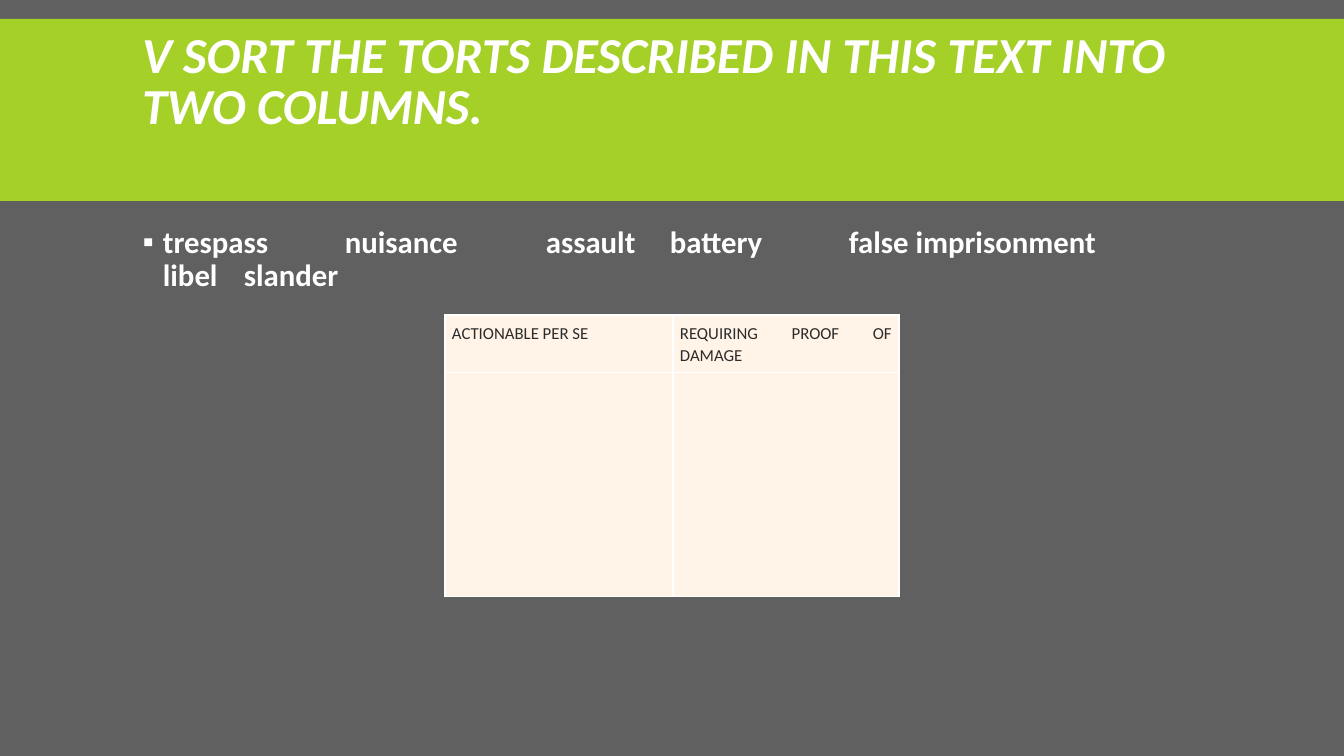
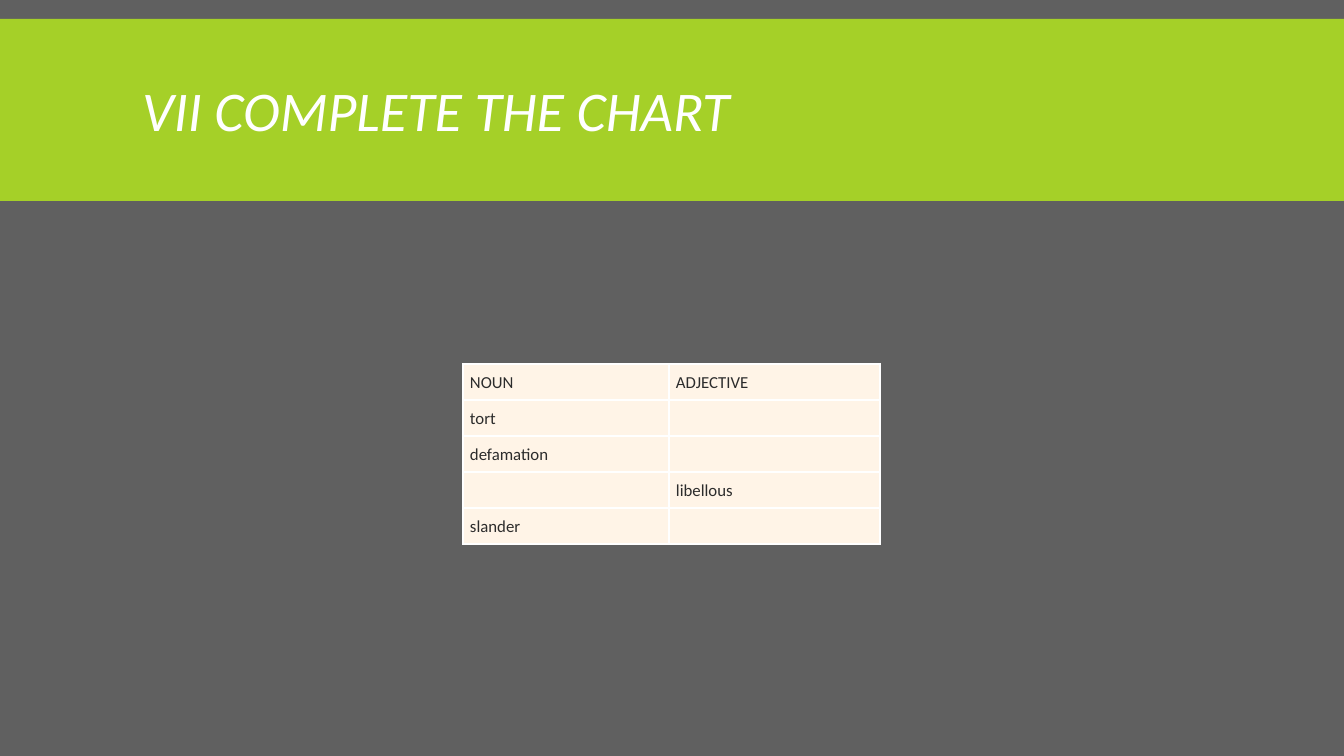
import dataclasses
import typing

import lxml.etree
import pptx
import pptx.dml.color
import pptx.enum.shapes
import pptx.enum.text
import pptx.oxml.ns
import pptx.util

EMU_PER_PX = 914400 / 100.8
SLIDE_WIDTH, SLIDE_HEIGHT = 1344, 756
FONT = "Calibri"
COLORS = {
    "background": "606060",
    "band": "A5D028",
    "light": "FFFFFF",
    "cell": "FFF4E7",
    "ink": "2C2C2C",
}
ALIGN = pptx.enum.text.PP_ALIGN
ANCHOR = pptx.enum.text.MSO_ANCHOR
NO_AUTOFIT = pptx.enum.text.MSO_AUTO_SIZE.NONE


@dataclasses.dataclass(frozen=True)
class Box:
    left: int
    top: int
    width: int
    height: int


@dataclasses.dataclass(frozen=True)
class Title:
    text: str
    size: int
    bold: bool
    anchor: typing.Any
    inset: int


@dataclasses.dataclass(frozen=True)
class Grid:
    left: int
    top: int
    columns: tuple[int, ...]
    row_heights: tuple[int, ...]
    rows: tuple[tuple[str, ...], ...]


BAND = Box(0, 19, SLIDE_WIDTH, 182)
TITLE_BOX = Box(132, 31, 1080, 166)
WORDS_BOX = Box(133, 222, 1079, 464)
WORDS = ("trespass", "nuisance", "assault", "battery", "false imprisonment", "libel", "slander")
WORD_TABS = (101, 202, 403, 527, 706, 1008)
WORDS_INDENT = 20
CELL_INSET = 7

TORTS_TITLE = Title(
    "V SORT THE TORTS DESCRIBED IN THIS TEXT INTO TWO COLUMNS.", 36, True, ANCHOR.TOP, 1)
TORTS_GRID = Grid(445, 315, (228, 226), (57, 224), (
    ("ACTIONABLE PER SE", "REQUIRING PROOF OF DAMAGE"),
    ("", ""),
))
CHART_TITLE = Title("VII COMPLETE THE CHART", 40, False, ANCHOR.MIDDLE, 5)
CHART_GRID = Grid(463, 364, (206, 211), (36,) * 5, (
    ("NOUN", "ADJECTIVE"),
    ("tort", ""),
    ("defamation", ""),
    ("", "libellous"),
    ("slander", ""),
))


def px(length: int) -> pptx.util.Emu:
    return pptx.util.Emu(round(length * EMU_PER_PX))


def place(box: Box) -> dict[str, int]:
    return {name: px(value) for name, value in dataclasses.asdict(box).items()}


def apply(target: typing.Any, values: dict[str, typing.Any]) -> None:
    for name, value in values.items():
        setattr(target, name, value)


def paint(fill: typing.Any, color: str) -> None:
    fill.solid()
    fill.fore_color.rgb = pptx.dml.color.RGBColor.from_string(COLORS[color])


def add_element(parent: typing.Any, tag: str, **attributes: typing.Any) -> typing.Any:
    values = {name: str(value) for name, value in attributes.items()}
    return lxml.etree.SubElement(parent, pptx.oxml.ns.qn(tag), values)


def write(paragraph: typing.Any, text: str, color: str, size: int,
          bold: bool = False, italic: bool = False) -> None:
    run = paragraph.add_run()
    run.text = text
    apply(run.font, {"name": FONT, "size": pptx.util.Pt(size), "bold": bold, "italic": italic})
    paint(run.font.fill, color)


def add_band(slide: typing.Any) -> None:
    band = slide.shapes.add_shape(
        pptx.enum.shapes.MSO_SHAPE.RECTANGLE, **place(BAND))
    band.shadow.inherit = False
    paint(band.fill, "band")
    band.line.fill.background()
    # Send the band behind the title
    slide.shapes._spTree.insert(2, band._element)


def set_title(slide: typing.Any, title: Title) -> None:
    shape = slide.shapes.title
    apply(shape, place(TITLE_BOX))
    apply(shape.text_frame, {
        "word_wrap": True,
        "auto_size": NO_AUTOFIT,
        "vertical_anchor": title.anchor,
        "margin_top": px(title.inset),
    })
    paragraph = shape.text_frame.paragraphs[0]
    apply(paragraph, {"alignment": ALIGN.LEFT, "line_spacing": 0.85})
    write(paragraph, title.text, "light", title.size, title.bold, italic=True)


def add_titled_slide(presentation: typing.Any, title: Title) -> typing.Any:
    """Add a slide with the shared background, band and title style."""
    layout = presentation.slide_layouts.get_by_name("Title Only")
    slide = presentation.slides.add_slide(layout)
    paint(slide.background.fill, "background")
    add_band(slide)
    set_title(slide, title)
    return slide


def add_words(slide: typing.Any) -> None:
    shape = slide.shapes.add_textbox(**place(WORDS_BOX))
    apply(shape.text_frame, {"word_wrap": True, "auto_size": NO_AUTOFIT})
    paragraph = shape.text_frame.paragraphs[0]
    apply(paragraph, {
        "line_spacing": 0.9,
        "space_before": pptx.util.Pt(12),
        "space_after": pptx.util.Pt(2),
    })
    # Square bullet, hanging indent and tab stops
    properties = paragraph._p.get_or_add_pPr()
    properties.set("marL", str(px(WORDS_INDENT)))
    properties.set("indent", str(px(-WORDS_INDENT)))
    bullet_color = add_element(properties, "a:buClr")
    add_element(bullet_color, "a:srgbClr", val=COLORS["light"])
    add_element(properties, "a:buFont", typeface=FONT)
    add_element(properties, "a:buChar", char="▪")
    tabs = add_element(properties, "a:tabLst")
    for position in WORD_TABS:
        add_element(tabs, "a:tab", pos=px(position), algn="l")
    write(paragraph, "\t".join(WORDS), "light", 22, bold=True)


def format_cell(cell: typing.Any, text: str) -> None:
    sides = ("left", "right", "top", "bottom")
    apply(cell, {f"margin_{side}": px(CELL_INSET) for side in sides})
    paragraph = cell.text_frame.paragraphs[0]
    apply(paragraph, {
        "alignment": ALIGN.JUSTIFY, "line_spacing": 1.07, "space_after": pptx.util.Pt(8)})
    if text:
        write(paragraph, text, "ink", 12)
    else:
        add_element(paragraph._p, "a:endParaRPr", sz=1200)
    # Borders come before the fill in the cell properties
    properties = cell._tc.get_or_add_tcPr()
    for side in ("L", "R", "T", "B"):
        border = add_element(properties, f"a:ln{side}", w=pptx.util.Pt(1))
        add_element(add_element(border, "a:solidFill"), "a:srgbClr", val=COLORS["light"])
    paint(cell.fill, "cell")


def add_grid(slide: typing.Any, grid: Grid) -> None:
    box = Box(grid.left, grid.top, sum(grid.columns), sum(grid.row_heights))
    table = slide.shapes.add_table(len(grid.rows), len(grid.columns), **place(box)).table
    apply(table, {"first_row": False, "horz_banding": False})
    for column, width in zip(table.columns, grid.columns):
        column.width = px(width)
    for row, height, texts in zip(table.rows, grid.row_heights, grid.rows):
        row.height = px(height)
        for cell, text in zip(row.cells, texts):
            format_cell(cell, text)


def main() -> None:
    presentation = pptx.Presentation()
    apply(presentation, {"slide_width": px(SLIDE_WIDTH), "slide_height": px(SLIDE_HEIGHT)})

    # Sorting exercise
    torts_slide = add_titled_slide(presentation, TORTS_TITLE)
    add_words(torts_slide)
    add_grid(torts_slide, TORTS_GRID)

    # Word-form exercise
    chart_slide = add_titled_slide(presentation, CHART_TITLE)
    add_grid(chart_slide, CHART_GRID)

    presentation.save("out.pptx")


if __name__ == "__main__":
    main()
